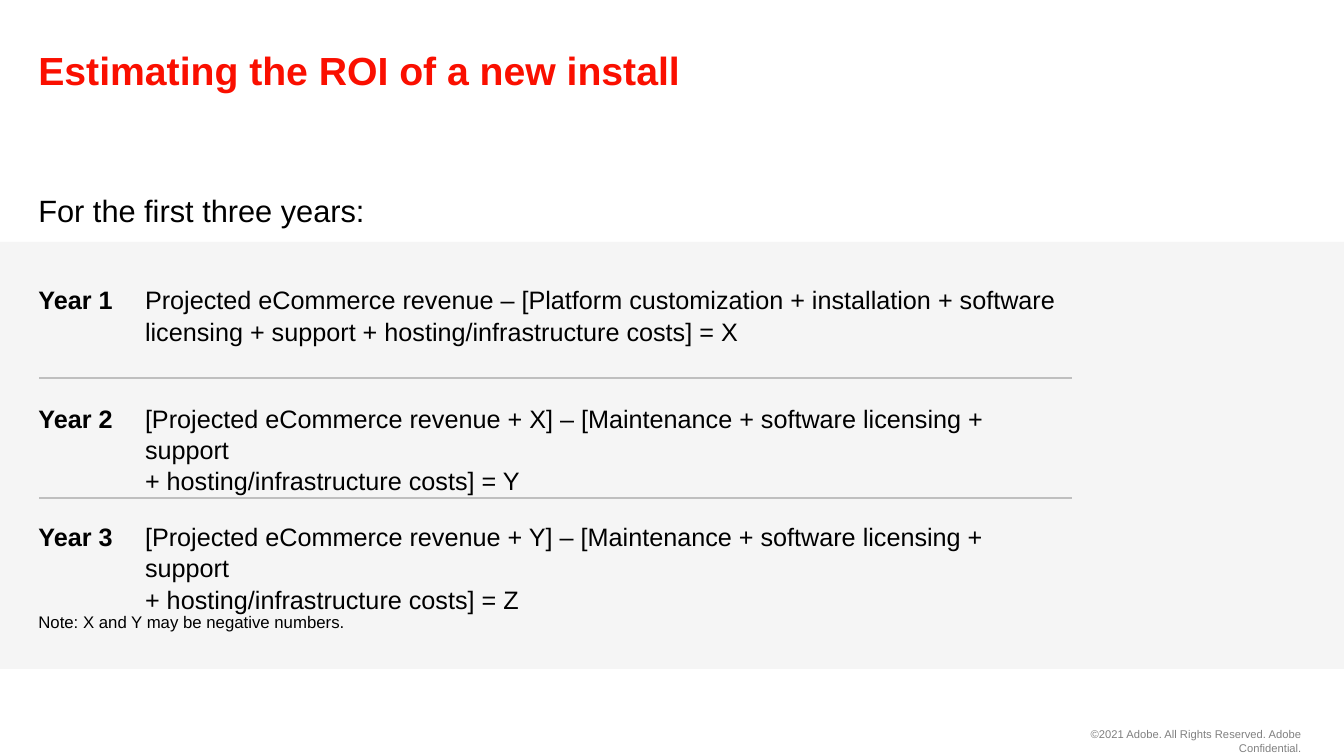
"""Build the slide on estimating the return of a new install over three years."""
from lxml import etree
from pptx import Presentation
from pptx.dml import color
from pptx.enum import shapes, text
from pptx.oxml import ns
from pptx.util import Pt

TITLE = "Estimating the ROI of a new install"
INTRO = "For the first three years:"
YEARS = [
    ("Year 1", "Projected eCommerce revenue – [Platform customization + installation + software "
     "licensing + support + hosting/infrastructure costs] = X", 672),
    ("Year 2", "[Projected eCommerce revenue + X] – [Maintenance + software licensing + support"
     "\n+ hosting/infrastructure costs] = Y", 620),
    ("Year 3", "[Projected eCommerce revenue + Y] – [Maintenance + software licensing + support"
     "\n+ hosting/infrastructure costs] = Z", 627),
]
NOTE = "Note: X and Y may be negative numbers."
FOOTER = "©2021 Adobe. All Rights Reserved. Adobe Confidential."

PAGE_WIDTH, PAGE_HEIGHT = 960, 540
LEFT, FORMULA_LEFT = 23.8, 100
ROW_TOP, ROW_STEP, ROW_HEIGHT = 199, 84.4, 66
RULE_LEFT, RULE_RIGHT, RULE_TOP, RULE_STEP = 28, 766, 270, 85.7
INSET = 3.6


def rgb(value):
    return color.RGBColor.from_string(value)


def apply(target, values):
    for name, value in values.items():
        setattr(target, name, value)


def place(box, left, top, width, height):
    apply(box, {"left": Pt(left), "top": Pt(top), "width": Pt(width), "height": Pt(height)})


def write(box, words, size, hue="000000", bold=False, spacing=1.04,
          align=text.PP_ALIGN.LEFT, anchor=text.MSO_ANCHOR.TOP, side=INSET):
    frame = box.text_frame
    apply(frame, {"word_wrap": True, "auto_size": text.MSO_AUTO_SIZE.NONE,
                  "vertical_anchor": anchor,
                  "margin_left": Pt(side), "margin_right": Pt(side),
                  "margin_top": Pt(INSET), "margin_bottom": Pt(INSET)})
    para = frame.paragraphs[0]
    para.text = words
    apply(para, {"alignment": align, "line_spacing": spacing, "space_before": Pt(0)})
    for span in para.runs:
        apply(span.font, {"name": "Arial", "size": Pt(size), "bold": bold})
        span.font.color.rgb = rgb(hue)


def add_text(page, area, words, size, **look):
    box = page.shapes.add_textbox(0, 0, 0, 0)
    place(box, *area)
    write(box, words, size, **look)


def add_band(page):
    band = page.shapes.add_shape(shapes.MSO_SHAPE.RECTANGLE, 0, Pt(172.8), Pt(PAGE_WIDTH), Pt(305))
    band.shadow.inherit = False
    band.fill.solid()
    band.fill.fore_color.rgb = rgb("F5F5F5")
    band.line.fill.background()


def add_rule(page, top):
    rule = page.shapes.add_connector(shapes.MSO_CONNECTOR.STRAIGHT, Pt(RULE_LEFT), Pt(top),
                                     Pt(RULE_RIGHT), Pt(top))
    rule.line.color.rgb = rgb("BFBFBF")
    rule.line.width = Pt(1)
    etree.SubElement(rule._element.spPr, ns.qn("a:effectLst"))


def main():
    deck = Presentation()
    apply(deck, {"slide_width": Pt(PAGE_WIDTH), "slide_height": Pt(PAGE_HEIGHT)})
    page = deck.slides.add_slide(deck.slide_layouts[1])

    title, intro = page.placeholders
    place(title, LEFT, 28.8, 911.5, 41)
    write(title, TITLE, 28, hue="FA0F00", bold=True, anchor=text.MSO_ANCHOR.MIDDLE)

    place(intro, LEFT, 132.5, 715.7, 33)
    props = intro.text_frame.paragraphs[0]._p.get_or_add_pPr()
    apply_indent = {"marL": "0", "indent": "0"}
    props.attrib.update(apply_indent)
    etree.SubElement(props, ns.qn("a:buNone"))
    write(intro, INTRO, 22)

    add_band(page)
    for index, (year, formula, width) in enumerate(YEARS):
        top = ROW_TOP + index * ROW_STEP
        add_text(page, (LEFT, top, 73, ROW_HEIGHT), year, 18, bold=True)
        add_text(page, (FORMULA_LEFT, top, width, ROW_HEIGHT), formula, 18)
        if index < len(YEARS) - 1:
            add_rule(page, RULE_TOP + index * RULE_STEP)

    add_text(page, (LEFT, 432.7, 230, 28), NOTE, 12)
    add_text(page, (732.3, 516.2, 204.5, 21.6), FOOTER, 8, hue="808080", spacing=1.0,
             align=text.PP_ALIGN.RIGHT, side=7.2)
    deck.save("out.pptx")


if __name__ == "__main__":
    main()
